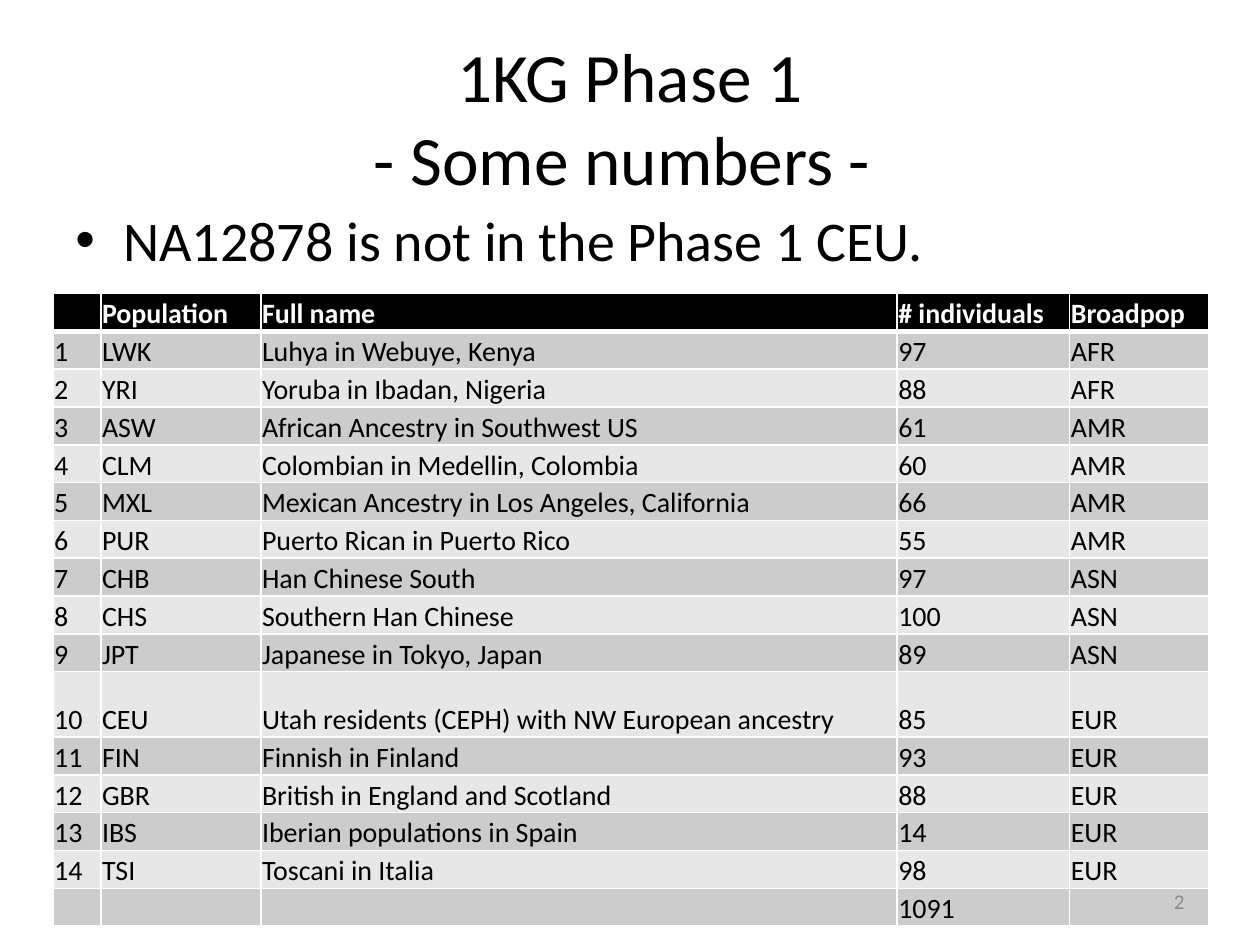
"""Build the 1KG Phase 1 population numbers slide."""
from lxml import etree
from pptx import Presentation
from pptx.dml.color import RGBColor
from pptx.enum import text as t
from pptx.oxml import ns
from pptx.util import Inches, Pt

BLACK = RGBColor(0x00, 0x00, 0x00)
WHITE = RGBColor(0xFF, 0xFF, 0xFF)
DARK_BAND = RGBColor(0xCC, 0xCC, 0xCC)
LIGHT_BAND = RGBColor(0xE7, 0xE7, 0xE7)
GREY = RGBColor(0x8C, 0x8C, 0x8C)

HEADINGS = ("", "Population", "Full name", "# individuals", "Broadpop")
POPULATIONS = [
    ("LWK", "Luhya in Webuye, Kenya", 97, "AFR"),
    ("YRI", "Yoruba in Ibadan, Nigeria", 88, "AFR"),
    ("ASW", "African Ancestry in Southwest US", 61, "AMR"),
    ("CLM", "Colombian in Medellin, Colombia", 60, "AMR"),
    ("MXL", "Mexican Ancestry in Los Angeles, California", 66, "AMR"),
    ("PUR", "Puerto Rican in Puerto Rico", 55, "AMR"),
    ("CHB", "Han Chinese South", 97, "ASN"),
    ("CHS", "Southern Han Chinese", 100, "ASN"),
    ("JPT", "Japanese in Tokyo, Japan", 89, "ASN"),
    ("CEU", "Utah residents (CEPH) with NW European ancestry", 85, "EUR"),
    ("FIN", "Finnish in Finland", 93, "EUR"),
    ("GBR", "British in England and Scotland", 88, "EUR"),
    ("IBS", "Iberian populations in Spain", 14, "EUR"),
    ("TSI", "Toscani in Italia", 98, "EUR"),
]
COLUMN_WIDTHS = (0.38, 1.27, 5.05, 1.37, 1.1)
ROW_HEIGHT, TALL_ROW_HEIGHT, TALL_ROW = 0.3, 0.52, 10


def write(frame, words, size, color=BLACK, bold=False, align=t.PP_ALIGN.LEFT):
    para = frame.paragraphs[0]
    para.alignment = align
    for index, line in enumerate(words.split("\n")):
        if index:
            para.add_line_break()
        if line:
            span = para.add_run()
            span.text = line
            span.font.name = "Calibri"
            span.font.size = Pt(size)
            span.font.bold = bold
            span.font.color.rgb = color
    if not words:
        etree.SubElement(para._p, ns.qn("a:endParaRPr"), sz=str(size * 100))
    return para


def add_text(page, left, top, width, height, words, size,
             anchor=t.MSO_ANCHOR.MIDDLE, **style):
    box = page.shapes.add_textbox(
        Inches(left), Inches(top), Inches(width), Inches(height))
    box.text_frame.word_wrap = True
    box.text_frame.vertical_anchor = anchor
    return write(box.text_frame, words, size, **style)


deck = Presentation()
deck.slide_width, deck.slide_height = Inches(10), Inches(7.5)
page = deck.slides.add_slide(deck.slide_layouts[6])

point = add_text(page, 0.5, 1.58, 9, 4.95, "NA12878 is not in the Phase 1 CEU.",
                 32, anchor=t.MSO_ANCHOR.TOP)
point.space_before = Pt(6.4)
point_format = point._p.get_or_add_pPr()
point_format.set("marL", str(Inches(0.38)))
point_format.set("indent", str(-Inches(0.38)))
etree.SubElement(point_format, ns.qn("a:buFont"), typeface="Arial")
etree.SubElement(point_format, ns.qn("a:buChar"), char="•")

add_text(page, 0.5, 0.3, 9, 1.25, "1KG Phase 1\n- Some numbers - ", 39.6,
         align=t.PP_ALIGN.CENTER)

total = sum(population[2] for population in POPULATIONS)
rows = [HEADINGS]
rows += [(number, *population) for number, population in enumerate(POPULATIONS, 1)]
rows.append(("", "", "", total, ""))

table = page.shapes.add_table(
    len(rows), len(HEADINGS), Inches(0.42), Inches(2.33),
    Inches(sum(COLUMN_WIDTHS)), Inches(5)).table
for column, width in zip(table.columns, COLUMN_WIDTHS):
    column.width = Inches(width)

for r, values in enumerate(rows):
    table.rows[r].height = Inches(TALL_ROW_HEIGHT if r == TALL_ROW else ROW_HEIGHT)
    header = r == 0
    fill = BLACK if header else DARK_BAND if r % 2 else LIGHT_BAND
    for c, value in enumerate(values):
        cell = table.cell(r, c)
        cell.margin_left = cell.margin_right = cell.margin_top = Inches(0.01)
        cell.margin_bottom = 0
        cell.vertical_anchor = t.MSO_ANCHOR.BOTTOM
        write(cell.text_frame, str(value), 16,
              color=WHITE if header else BLACK, bold=header)
        borders = {"lnL": 1, "lnR": 1, "lnT": 3 if r == 1 else 1,
                   "lnB": 3 if header else 1}
        for side, weight in borders.items():
            line = etree.SubElement(cell._tc.get_or_add_tcPr(),
                                    ns.qn(f"a:{side}"), w=str(Pt(weight)))
            paint = etree.SubElement(line, ns.qn("a:solidFill"))
            etree.SubElement(paint, ns.qn("a:srgbClr"), val=str(WHITE))
        cell.fill.solid()
        cell.fill.fore_color.rgb = fill

add_text(page, 7.17, 6.95, 2.33, 0.4, "2", 12, color=GREY,
         align=t.PP_ALIGN.RIGHT)

deck.save("out.pptx")
